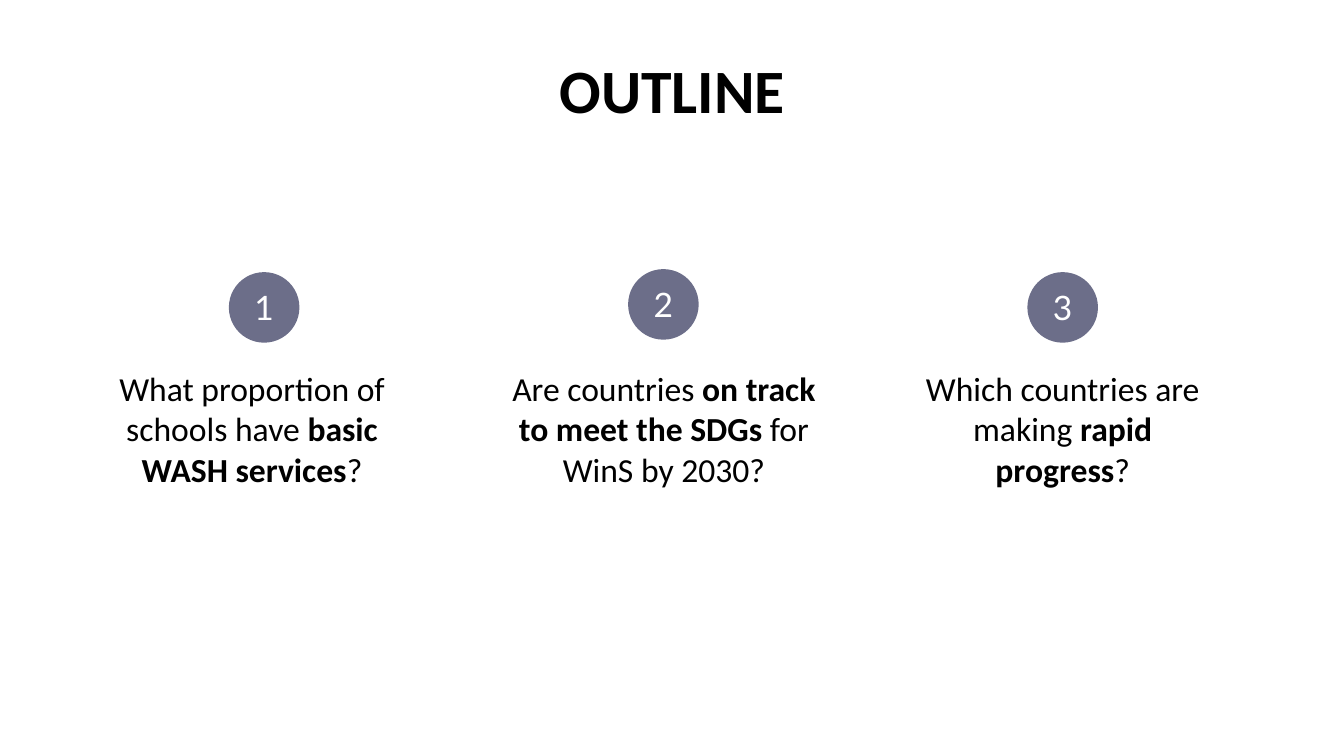
"""Build the outline slide with three numbered questions."""
import dataclasses

import pptx
import pptx.dml.color
import pptx.enum.shapes
import pptx.enum.text
import pptx.util

Inches = pptx.util.Inches
BADGE_SIZE = 0.7
BADGE_LEFT = 2.27
BADGE_PITCH = 3.96
QUESTION_TOP = 3.6


@dataclasses.dataclass(frozen=True)
class Question:
    """One question with its emphasised words and its placement."""
    lead: str
    emphasis: str
    tail: str
    left: float
    width: float
    height: float
    badge_top: float


QUESTIONS = [
    Question("What proportion of schools have ", "basic WASH services", "?",
             0.83, 3.34, 1.62, 2.7),
    Question("Are countries ", "on track to meet the SDGs", " for WinS by 2030?",
             4.87, 3.43, 1.45, 2.67),
    Question("Which countries are making ", "rapid progress", "?",
             8.87, 3.34, 2.21, 2.7),
]


def color(code: str) -> pptx.dml.color.RGBColor:
    """Turn a hex string into a colour."""
    return pptx.dml.color.RGBColor.from_string(code)


def write(shape, *runs: tuple[str, bool], size: float = 24, font: str = "Calibri",
          ink: str = "000000", middle: bool = False, spacing: float = 1.0) -> None:
    """Fill a shape with one centred paragraph of (text, bold) runs."""
    anchor = pptx.enum.text.MSO_ANCHOR
    frame = shape.text_frame
    frame.word_wrap = True
    frame.vertical_anchor = anchor.MIDDLE if middle else anchor.TOP
    paragraph = frame.paragraphs[0]
    paragraph.alignment = pptx.enum.text.PP_ALIGN.CENTER
    paragraph.line_spacing = spacing
    for text, bold in runs:
        run = paragraph.add_run()
        run.text = text
        run.font.size = pptx.util.Pt(size)
        run.font.name = font
        run.font.bold = bold
        run.font.color.rgb = color(ink)


def add_text_area(slide, left: float, top: float, width: float, height: float):
    """Add an empty text box measured in inches."""
    return slide.shapes.add_textbox(
        Inches(left), Inches(top), Inches(width), Inches(height))


def add_badge(slide, number: int, top: float) -> None:
    """Draw the numbered circle above a question."""
    left = BADGE_LEFT + (number - 1) * BADGE_PITCH
    badge = slide.shapes.add_shape(
        pptx.enum.shapes.MSO_SHAPE.OVAL, Inches(left), Inches(top),
        Inches(BADGE_SIZE), Inches(BADGE_SIZE))
    badge.shadow.inherit = False
    badge.fill.solid()
    badge.fill.fore_color.rgb = color("6C6E89")
    badge.line.fill.background()
    write(badge, (str(number), False), font="Lato", ink="FFFFFF", middle=True)


def add_question(slide, question: Question) -> None:
    """Place the text of one question."""
    area = add_text_area(
        slide, question.left, QUESTION_TOP, question.width, question.height)
    write(area, (question.lead, False), (question.emphasis, True),
          (question.tail, False))


def main() -> None:
    """Compose and save the slide."""
    deck = pptx.Presentation()
    deck.slide_width = Inches(13.33)
    deck.slide_height = Inches(7.5)
    slide = deck.slides.add_slide(deck.slide_layouts[6])
    heading = add_text_area(slide, 0.92, 0.2, 11.5, 1.45)
    write(heading, ("OUTLINE", True), size=44, middle=True, spacing=0.9)
    for number, question in enumerate(QUESTIONS, start=1):
        add_badge(slide, number, question.badge_top)
        add_question(slide, question)
    deck.save("out.pptx")


if __name__ == "__main__":
    main()
